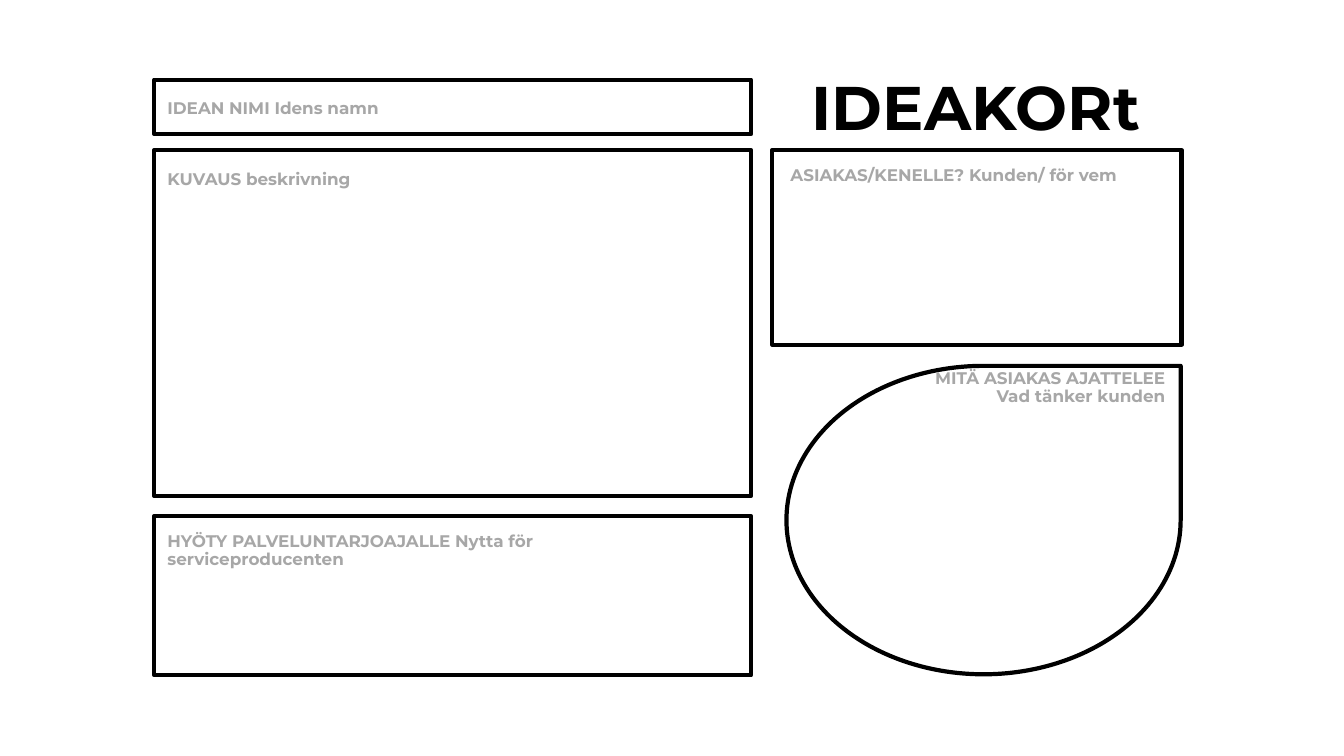
from pptx import Presentation
from pptx.dml.color import RGBColor
from pptx.enum.shapes import MSO_SHAPE
from pptx.enum.text import MSO_AUTO_SIZE, PP_ALIGN
from pptx.util import Inches, Pt

BLACK = RGBColor(0x00, 0x00, 0x00)
GREY = RGBColor(0xA7, 0xA7, 0xA7)
RECT, DROP = MSO_SHAPE.RECTANGLE, MSO_SHAPE.TEAR
LEFT, CENTER, RIGHT = PP_ALIGN.LEFT, PP_ALIGN.CENTER, PP_ALIGN.RIGHT
GROW, FIXED = MSO_AUTO_SIZE.SHAPE_TO_FIT_TEXT, MSO_AUTO_SIZE.NONE

COL_X, COL_W = 1.53, 5.92
LABEL_X = 1.62
LABEL = {"name": "Montserrat", "size": Pt(12), "bold": True}
TITLE = {**LABEL, "size": Pt(44)}
FRAME = {"word_wrap": True} | {
    f"margin_{side}": Inches(0.04) for side in ("left", "top", "right", "bottom")
}


def apply(target, values):
    for name, value in values.items():
        setattr(target, name, value)


def add_frame(slide, kind, *box):
    shape = slide.shapes.add_shape(kind, *map(Inches, box))
    shape.shadow.inherit = False
    shape.fill.background()
    shape.line.color.rgb = BLACK
    shape.line.width = Pt(3)


def add_text(slide, lines, box, align=LEFT, font=LABEL, color=GREY, fit=FIXED):
    frame = slide.shapes.add_textbox(*map(Inches, box)).text_frame
    apply(frame, {**FRAME, "auto_size": fit})
    for index, line in enumerate(lines):
        para = frame.add_paragraph() if index else frame.paragraphs[0]
        apply(para, {"alignment": align, "line_spacing": 0.9})
        run = para.add_run()
        run.text = line
        apply(run.font, font)
        run.font.color.rgb = color


def main():
    deck = Presentation()
    apply(deck, {"slide_width": Inches(13.33), "slide_height": Inches(7.5)})
    slide = deck.slides.add_slide(deck.slide_layouts[6])

    add_text(slide, ["IDEAKORt"], (5.36, 0.73, 8.64, 0.74),
             CENTER, TITLE, BLACK, GROW)

    for top, height in ((0.79, 0.54), (1.49, 3.43), (5.12, 1.58)):
        add_frame(slide, RECT, COL_X, top, COL_W, height)
    add_frame(slide, DROP, 7.8, 3.63, 3.91, 3.06)
    add_frame(slide, RECT, 7.66, 1.49, 4.06, 1.93)

    for text, left, top, width, height in (
        ("IDEAN NIMI Idens namn", LABEL_X, 0.95, 3.02, 0.26),
        ("KUVAUS beskrivning", LABEL_X, 1.66, 3.02, 0.26),
        ("HYÖTY PALVELUNTARJOAJALLE Nytta för serviceproducenten",
         LABEL_X, 5.25, 4.58, 0.44),
        ("ASIAKAS/KENELLE? Kunden/ för vem", 7.8, 1.62, 4.32, 0.26),
    ):
        add_text(slide, [text], (left, top, width, height))
    add_text(slide, ["MITÄ ASIAKAS AJATTELEE", "Vad tänker kunden"],
             (7.28, 3.63, 4.32, 0.45), RIGHT)

    deck.save("out.pptx")


if __name__ == "__main__":
    main()
